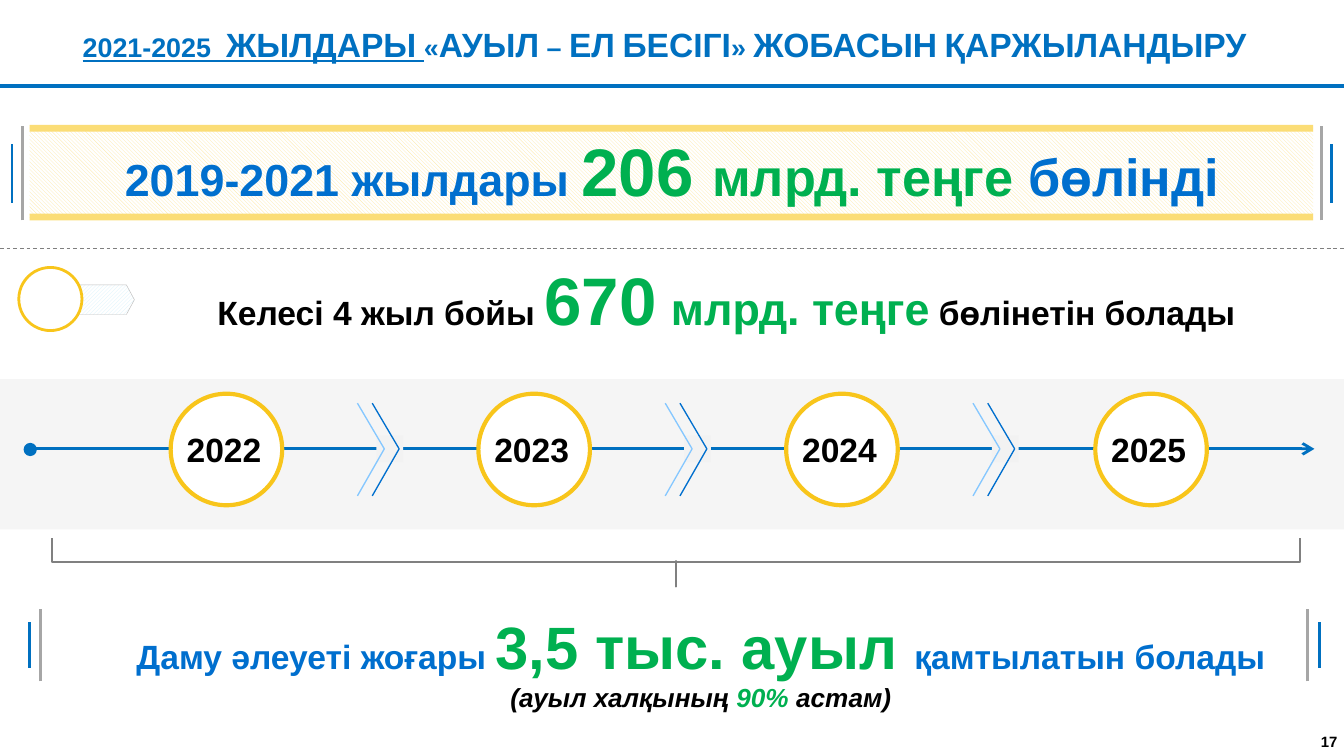
from lxml import etree
from pptx import Presentation
from pptx import util as u
from pptx.dml import color
from pptx.enum import dml, shapes, text
from pptx.oxml import ns

PX = 9144
FONT = "Arial"
COLORS = {
    "white": "FFFFFF", "black": "000000", "blue": "0070C0", "ink": "006FCE",
    "sky": "85C7FF", "green": "00B050", "gold": "F8C51B", "sand": "FBDD76",
    "cream": "FDE8A4", "ice": "D5F2FC", "band": "F2F2F2", "silver": "BFBFBF",
    "bar": "A6A6A6", "brace": "808080", "gray": "7F7F7F",
}
SHAPE = shapes.MSO_SHAPE
PATTERN = dml.MSO_PATTERN
ANCHOR = text.MSO_ANCHOR
ALIGN = text.PP_ALIGN


def rgb(name):
    return color.RGBColor.from_string(COLORS[name])


def child(parent, tag, **attributes):
    return etree.SubElement(parent, ns.qn(tag), attributes)


def add_span(para, words, size=18, ink="black", italic=None, underline=None, caps=None):
    span = para.add_run()
    span.text = words
    font = span.font
    font.name, font.size, font.bold = FONT, u.Pt(size), True
    font.italic, font.underline = italic, underline
    font.color.rgb = rgb(ink)
    if caps:
        font._element.set("cap", caps)


class Sketch:
    def __init__(self, page):
        self.page = page

    def paint(self, item, fill=None, line=None, weight=1, pattern=None):
        if pattern:
            item.fill.patterned()
            item.fill.pattern = pattern
            item.fill.fore_color.rgb = rgb(fill)
            item.fill.back_color.rgb = rgb("white")
        elif fill:
            item.fill.solid()
            item.fill.fore_color.rgb = rgb(fill)
        else:
            item.fill.background()
        if line:
            item.line.color.rgb = rgb(line)
            item.line.width = u.Pt(weight)
        else:
            item.line.fill.background()
        item.shadow.inherit = False
        return item

    def shape(self, kind, left, top, width, height, adjust=(), **style):
        item = self.page.shapes.add_shape(kind, left * PX, top * PX, width * PX, height * PX)
        for index, value in enumerate(adjust):
            item.adjustments[index] = value
        return self.paint(item, **style)

    def line(self, x1, y1, x2, y2, ink, weight, dash=None, arrow=False):
        item = self.page.shapes.add_connector(
            shapes.MSO_CONNECTOR.STRAIGHT, x1 * PX, y1 * PX, x2 * PX, y2 * PX)
        item.line.color.rgb = rgb(ink)
        item.line.width = u.Pt(weight)
        if dash:
            item.line.dash_style = dash
        if arrow:
            child(item.line._get_or_add_ln(), "a:tailEnd", type="arrow")
        child(item._element.spPr, "a:effectLst")
        return item

    def outline(self, points, ink, weight):
        builder = self.page.shapes.build_freeform(*points[0], scale=PX)
        builder.add_line_segments(points[1:], close=False)
        return self.paint(builder.convert_to_shape(), line=ink, weight=weight)

    def text(self, left, top, width, height, *rows, anchor=ANCHOR.TOP,
             align=ALIGN.CENTER, wrap=True):
        box = self.page.shapes.add_textbox(left * PX, top * PX, width * PX, height * PX)
        frame = box.text_frame
        frame.word_wrap = wrap
        frame.vertical_anchor = anchor
        para = frame.paragraphs[0]
        para.alignment = align
        for index, spans in enumerate(rows):
            if index:
                para.add_line_break()
            for words, style in spans:
                add_span(para, words, **style)
        return box

    def side_bars(self, inner, outer, top, bottom, inset):
        self.line(inner, bottom, inner, top, "bar", 1.5)
        self.line(outer, bottom - inset, outer, top + inset, "blue", 1.5)

    def year(self, left, label):
        self.shape(SHAPE.OVAL, left, 293, 83, 83, fill="white", line="gold", weight=2.25)
        self.text(left + 2, 314, 76, 40, [(label, {})], align=ALIGN.LEFT, wrap=False)

    def chevron(self, left):
        self.shape(SHAPE.RECTANGLE, left + 14, 324, 20, 20, fill="band")
        for x, ink in ((left, "sky"), (left + 11, "ink")):
            self.outline([(x, 300), (x + 20, 334), (x, 369)], ink, 0.72)


def main():
    deck = Presentation()
    deck.slide_width = 1000 * PX
    deck.slide_height = deck.slide_width * 9 // 16
    sketch = Sketch(deck.slides.add_slide(deck.slide_layouts[6]))

    sketch.text(971, 543, 36, 18, [("17", {"size": 8})], anchor=ANCHOR.MIDDLE)
    band = sketch.shape(SHAPE.RECTANGLE, 0, 282, 1000, 112, fill="band")
    child(band.fill._xPr.find(".//" + ns.qn("a:srgbClr")), "a:alpha", val="70000")
    sketch.line(22, 334, 978, 334, "blue", 1.5, arrow=True)

    title = {"ink": "blue", "caps": "small"}
    sketch.text(0, 0, 989, 66, [
        ("2021-2025  ЖЫЛДАРЫ ", {**title, "underline": True}),
        ("«АУЫЛ – ЕЛ БЕСІГІ» ЖОБАСЫН ҚАРЖЫЛАНДЫРУ", title),
    ], anchor=ANCHOR.MIDDLE)
    sketch.line(0, 64, 1000, 64, "blue", 2.25)

    sketch.shape(SHAPE.ROUNDED_RECTANGLE, 22, 95, 955, 67, adjust=[0], fill="cream",
                 pattern=PATTERN.LIGHT_DOWNWARD_DIAGONAL)
    for top in (159, 93):
        sketch.shape(SHAPE.RECTANGLE, 22, top, 955, 5, fill="sand")
    for inner, outer in ((983, 991), (17, 9)):
        sketch.side_bars(inner, outer, 94, 164, 13)
    sketch.text(68, 91, 864, 71, [
        ("2019-2021 жылдары ", {"size": 24, "ink": "ink"}),
        ("206 ", {"size": 36, "ink": "green"}),
        ("млрд. теңге ", {"size": 28, "ink": "green"}),
        ("бөлінді", {"size": 28, "ink": "ink"}),
    ])

    note = {"size": 14, "italic": True}
    sketch.text(43, 444, 957, 91, [
        ("Даму әлеуеті жоғары ", {"ink": "ink"}),
        ("3,5 тыс. ауыл ", {"size": 32, "ink": "green"}),
        ("қамтылатын болады", {"ink": "ink"}),
    ], [
        ("(ауыл халқының ", note),
        ("90% ", {**note, "ink": "green"}),
        ("астам)", note),
    ], anchor=ANCHOR.BOTTOM)

    for index in range(4):
        shift = 688 * index // 3
        sketch.year(127 + shift, str(2022 + index))
        if index < 3:
            sketch.chevron(266 + shift)
    sketch.shape(SHAPE.OVAL, 19, 331, 7, 7, fill="blue", line="blue", weight=2)

    sketch.line(0, 185, 1000, 185, "gray", 0.5, dash=dml.MSO_LINE.DASH)
    sketch.text(99, 187, 883, 71, [
        ("Келесі 4 жыл бойы ", {}),
        ("670", {"size": 36, "ink": "green"}),
        (" ", {"size": 28, "ink": "green"}),
        ("млрд. теңге", {"size": 24, "ink": "green"}),
        (" бөлінетін болады", {}),
    ])
    sketch.shape(SHAPE.PENTAGON, 58, 212, 42, 22, adjust=[0.27], fill="ice",
                 pattern=PATTERN.DARK_UPWARD_DIAGONAL, line="silver", weight=0.25)
    sketch.shape(SHAPE.OVAL, 14, 199, 47, 47, fill="white", line="gold", weight=1.5)

    for inner, outer in ((973, 982), (30, 22)):
        sketch.side_bars(inner, outer, 453, 507, 10)

    stem = sketch.line(503, 417, 503, 430, "brace", 1)
    brace = sketch.shape(SHAPE.RIGHT_BRACE, 485, -46, 36, 929, adjust=[0, 0.5],
                         line="brace", weight=1)
    brace.rotation = 90
    cover = sketch.shape(SHAPE.RECTANGLE, 494, 399, 18, 18, fill="white")
    stem.begin_connect(cover, 2)

    deck.save("out.pptx")


if __name__ == "__main__":
    main()
